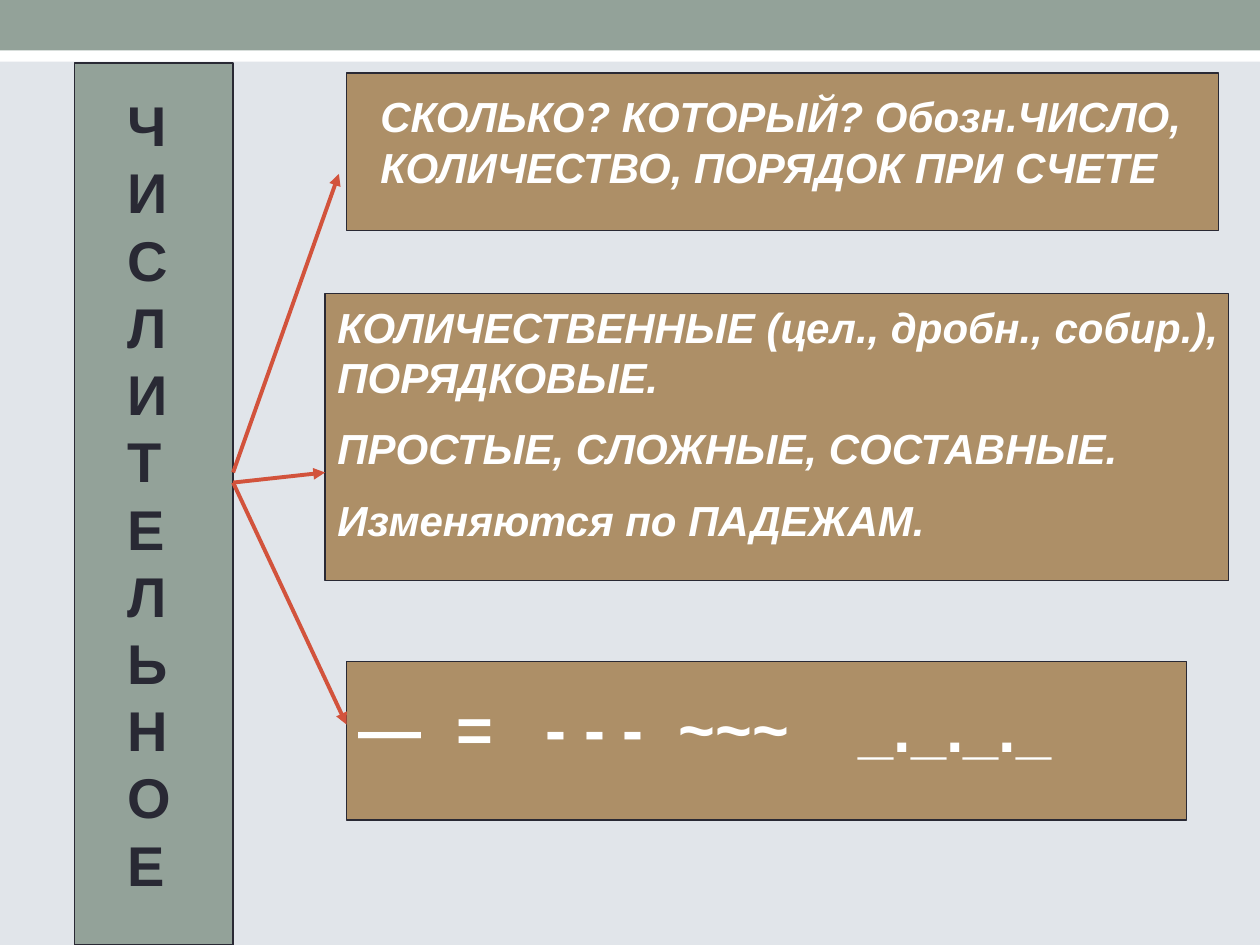
from dataclasses import dataclass
from pptx import Presentation
from pptx.dml.color import RGBColor as Rgb
from pptx.enum.shapes import MSO_CONNECTOR as Link, MSO_SHAPE as Kind
from pptx.enum.text import MSO_ANCHOR as Anchor, MSO_AUTO_SIZE as Auto, PP_ALIGN as Align
from pptx.oxml.ns import qn
from pptx.util import Inches, Pt
from lxml.etree import SubElement as Sub

WHITE, SAGE, TAN, DARK, RED = "FFFFFF", "93A299", "AD8F67", "292934", "D2533C"


@dataclass
class Box:
    at: tuple
    fill: str
    edge: str = ""


@dataclass
class Note:
    at: tuple
    lines: tuple
    size: int = 24
    slant: bool = True
    color: str = WHITE


BOXES = (
    Box((0, 0.24, 10, 0.25), WHITE),
    Box((0, 0, 10, 0.4), SAGE),
    Box((2.75, 5.25, 6.67, 1.26), TAN, DARK),
    Box((2.58, 2.33, 7.17, 2.28), TAN, DARK),
    Box((2.75, 0.58, 6.92, 1.25), TAN, DARK),
    Box((0.59, 0.5, 1.26, 7), SAGE, DARK),
)
TITLE = Note((0.91, 0.67, 0.55, 6.56), ("ЧИСЛИТЕЛЬНОЕ",), 32, False, DARK)
NOTES = (
    Note((2.92, 0.67, 7.08, 0.91),
         ("СКОЛЬКО? КОТОРЫЙ? Обозн.ЧИСЛО, КОЛИЧЕСТВО, ПОРЯДОК ПРИ СЧЕТЕ",)),
    Note((2.58, 2.34, 7.42, 2.12),
         ("КОЛИЧЕСТВЕННЫЕ (цел., дробн., собир.), ПОРЯДКОВЫЕ.",
          "ПРОСТЫЕ, СЛОЖНЫЕ, СОСТАВНЫЕ.",
          "Изменяются по ПАДЕЖАМ.")),
    Note((2.75, 5.42, 7.53, 0.7), ("—  =   - - -  ~~~    _._._._",), 36, False),
)
ARROWS = (
    (1.85, 3.75, 2.69, 1.38),
    (1.85, 3.83, 2.58, 3.75),
    (1.85, 3.83, 2.75, 5.75),
)


def tint(color: str) -> Rgb:
    return Rgb.from_string(color)


def span(at: tuple) -> list:
    return [Inches(n) for n in at]


def apply(item, form: dict) -> None:
    for name, value in form.items():
        setattr(item, name, value)


def draw_box(slide, box: Box):
    shape = slide.shapes.add_shape(Kind.RECTANGLE, *span(box.at))
    shape.shadow.inherit = False
    shape.fill.solid()
    shape.fill.fore_color.rgb = tint(box.fill)
    if box.edge:
        shape.line.color.rgb = tint(box.edge)
        shape.line.width = Pt(0.75)
    else:
        shape.line.fill.background()
    return shape


def write(shape, note: Note) -> None:
    apply(shape, dict(zip(("left", "top", "width", "height"), span(note.at))))
    frame = shape.text_frame
    apply(frame, {"word_wrap": True, "auto_size": Auto.NONE, "vertical_anchor": Anchor.TOP})
    frame.text = "\n".join(note.lines)
    for para in frame.paragraphs:
        apply(para, {"alignment": Align.LEFT, "space_before": Pt(note.size / 2)})
        font = para.runs[0].font
        apply(font, {"name": "Arial", "size": Pt(note.size), "bold": True, "italic": note.slant})
        font.color.rgb = tint(note.color)
    frame.paragraphs[0].space_before = Pt(0)


def draw_arrow(slide, ends: tuple) -> None:
    link = slide.shapes.add_connector(Link.STRAIGHT, *span(ends))
    link.line.color.rgb = tint(RED)
    link.line.width = Pt(2.25)
    Sub(link.line._get_or_add_ln(), qn("a:tailEnd"), type="triangle")
    Sub(link._element.spPr, qn("a:effectLst"))


def main() -> None:
    deck = Presentation()
    apply(deck, {"slide_width": Inches(10), "slide_height": Inches(7.5)})
    slide = deck.slides.add_slide(deck.slide_layouts[5])
    back = slide.background.fill
    back.solid()
    back.fore_color.rgb = tint("E1E5EA")
    for box in BOXES:
        band = draw_box(slide, box)
    title = slide.shapes.title
    write(title, TITLE)
    band._element.addnext(title._element)
    for note in NOTES:
        write(slide.shapes.add_textbox(*span(note.at)), note)
    for ends in ARROWS:
        draw_arrow(slide, ends)
    deck.save("out.pptx")


if __name__ == "__main__":
    main()
